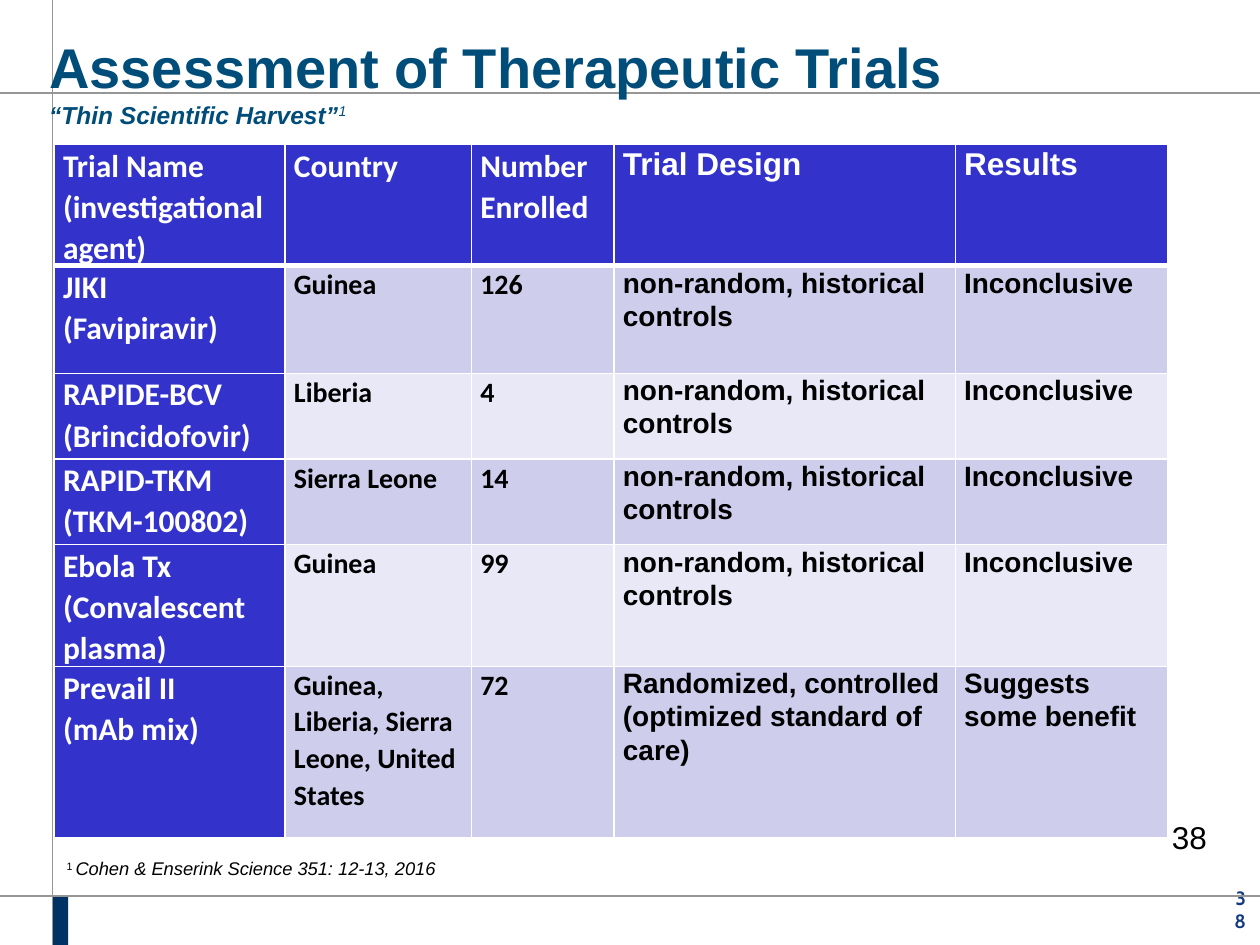
from lxml import etree
from pptx import Presentation, util as u
from pptx.dml.color import RGBColor
from pptx.enum import shapes, text
from pptx.oxml import ns

Pt = u.Pt


def color(value):
    return RGBColor.from_string(value)


class SlideBuilder:
    """Holds the style and the current slide."""

    white, black = "FFFFFF", "000000"
    navy, gray, title = "003264", "969696", "004D7A"
    head, bands = "3333CC", ("CECEEC", "E8E8F6")

    def __init__(self, presentation):
        self.slide = presentation.slides.add_slide(presentation.slide_layouts[6])

    def add_run(self, paragraph, content, raised=False, **formats):
        values = {"name": "Arial", "size": 18, "color": self.black, **formats}
        run = paragraph.add_run()
        run.text = content
        run.font.color.rgb = color(values.pop("color"))
        values["size"] = Pt(values["size"])
        for name, value in values.items():
            setattr(run.font, name, value)
        if raised:
            run.font._element.set("baseline", "30000")

    def textbox(self, left, top, width, height, lines, align="LEFT", **frame_formats):
        """Each line is a list of (text, format) runs; lines share one paragraph."""
        shape = self.slide.shapes.add_textbox(Pt(left), Pt(top), Pt(width), Pt(height))
        frame = shape.text_frame
        for name, value in {"word_wrap": True, **frame_formats}.items():
            setattr(frame, name, value)
        paragraph = frame.paragraphs[0]
        paragraph.alignment = getattr(text.PP_ALIGN, align)
        for index, runs in enumerate(lines):
            if index:
                paragraph.add_line_break()
                paragraph._p[-1].append(etree.Element(ns.qn("a:rPr"), sz="3200"))
            for content, formats in runs:
                self.add_run(paragraph, content, **formats)

    def rectangle(self, left, top, width, height, fill):
        shape = self.slide.shapes.add_shape(
            shapes.MSO_SHAPE.RECTANGLE, Pt(left), Pt(top), Pt(width), Pt(height))
        shape.shadow.inherit = False
        shape.fill.solid()
        shape.fill.fore_color.rgb = color(fill)
        shape.line.fill.background()

    def line(self, *ends):
        connector = self.slide.shapes.add_connector(
            shapes.MSO_CONNECTOR.STRAIGHT, *map(Pt, ends))
        connector.line.color.rgb = color(self.gray)
        connector.line.width = Pt(1)
        etree.SubElement(connector._element.spPr, ns.qn("a:effectLst"))

    def border(self, cell, side, width):
        line = etree.SubElement(cell._tc.get_or_add_tcPr(), ns.qn("a:ln" + side),
                                w=str(Pt(width)))
        fill = etree.SubElement(line, ns.qn("a:solidFill"))
        etree.SubElement(fill, ns.qn("a:srgbClr"), val=self.white)

    def cell(self, cell, content, row, column):
        is_head = row == 0 or column == 0
        for side in "LRTB":
            below_header = (row, side) in ((0, "B"), (1, "T"))
            self.border(cell, side, 3 if below_header else 1)
        cell.fill.solid()
        cell.fill.fore_color.rgb = color(self.head if is_head else self.bands[(row - 1) % 2])
        margins = {"margin_left": 5, "margin_right": 5, "margin_top": 0, "margin_bottom": 0}
        for name, value in margins.items():
            setattr(cell, name, Pt(value))
        for index, part in enumerate(content.split("\n")):
            frame = cell.text_frame
            paragraph = frame.add_paragraph() if index else frame.paragraphs[0]
            paragraph.line_spacing = 1.07
            self.add_run(paragraph, part, bold=True,
                         name="Arial" if column >= 3 else "Calibri",
                         size=18 if is_head else 16,
                         color=self.white if is_head else self.black)

    def table(self, left, top, widths, heights, rows):
        table = self.slide.shapes.add_table(
            len(rows), len(widths), Pt(left), Pt(top),
            Pt(sum(widths)), Pt(sum(heights))).table
        for column, width in zip(table.columns, widths):
            column.width = Pt(width)
        for row, height in zip(table.rows, heights):
            row.height = Pt(height)
        for row, contents in enumerate(rows):
            for column, content in enumerate(contents):
                self.cell(table.cell(row, column), content, row, column)


def main():
    presentation = Presentation()
    presentation.slide_width, presentation.slide_height = Pt(720), Pt(540)
    builder = SlideBuilder(presentation)

    # Page frame
    no_margins = {"margin_" + side: 0 for side in ("left", "right", "top", "bottom")}
    builder.textbox(
        700.5, 519, 11.5, 14,
        [[("38", {"name": "Cabin", "size": 11, "color": "14397F", "bold": True})]],
        align="RIGHT", vertical_anchor=text.MSO_ANCHOR.BOTTOM, **no_margins)
    builder.rectangle(30, 512, 9, 28, builder.navy)
    builder.line(0, 512, 720, 512)
    builder.line(30, 540, 30, 0)
    builder.line(0, 53, 720, 53)
    builder.textbox(662.5, 464, 37, 29, [[("38", {})]])

    # Trials table
    controls = "non-random, historical controls"
    open_result = "Inconclusive"
    rows = [
        ("Trial Name\n(investigational agent)", "Country", "Number Enrolled",
         "Trial Design", "Results"),
        ("JIKI\n(Favipiravir)", "Guinea", "126", controls, open_result),
        ("RAPIDE-BCV\n(Brincidofovir)", "Liberia", "4", controls, open_result),
        ("RAPID-TKM\n(TKM-100802)", "Sierra Leone", "14", controls, open_result),
        ("Ebola Tx\n(Convalescent plasma)", "Guinea", "99", controls, open_result),
        ("Prevail II\n(mAb mix)", "Guinea, Liberia, Sierra Leone, United States", "72",
         "Randomized, controlled\n(optimized standard of care)", "Suggests some benefit"),
    ]
    builder.table(31, 82.5, (132, 106.5, 81.5, 195, 121.5),
                  (69, 61.5, 49, 49, 69.5, 98), rows)

    # Title and subtitle
    subtitle = {"size": 14, "color": builder.title, "italic": True}
    builder.textbox(21, 15, 691, 63.5, [
        [("Assessment of Therapeutic Trials",
          {"size": 32, "color": builder.title, "bold": True})],
        [("“Thin Scientific Harvest”", {**subtitle, "bold": True}),
         ("1", {**subtitle, "raised": True})],
    ])

    # Citation
    builder.textbox(31, 486.5, 230, 20, [
        [("1 ", {"size": 10.5, "raised": True}),
         ("Cohen & Enserink Science 351: 12-13, 2016", {"size": 10.5, "italic": True})],
    ], word_wrap=False)

    presentation.save("out.pptx")


if __name__ == "__main__":
    main()
